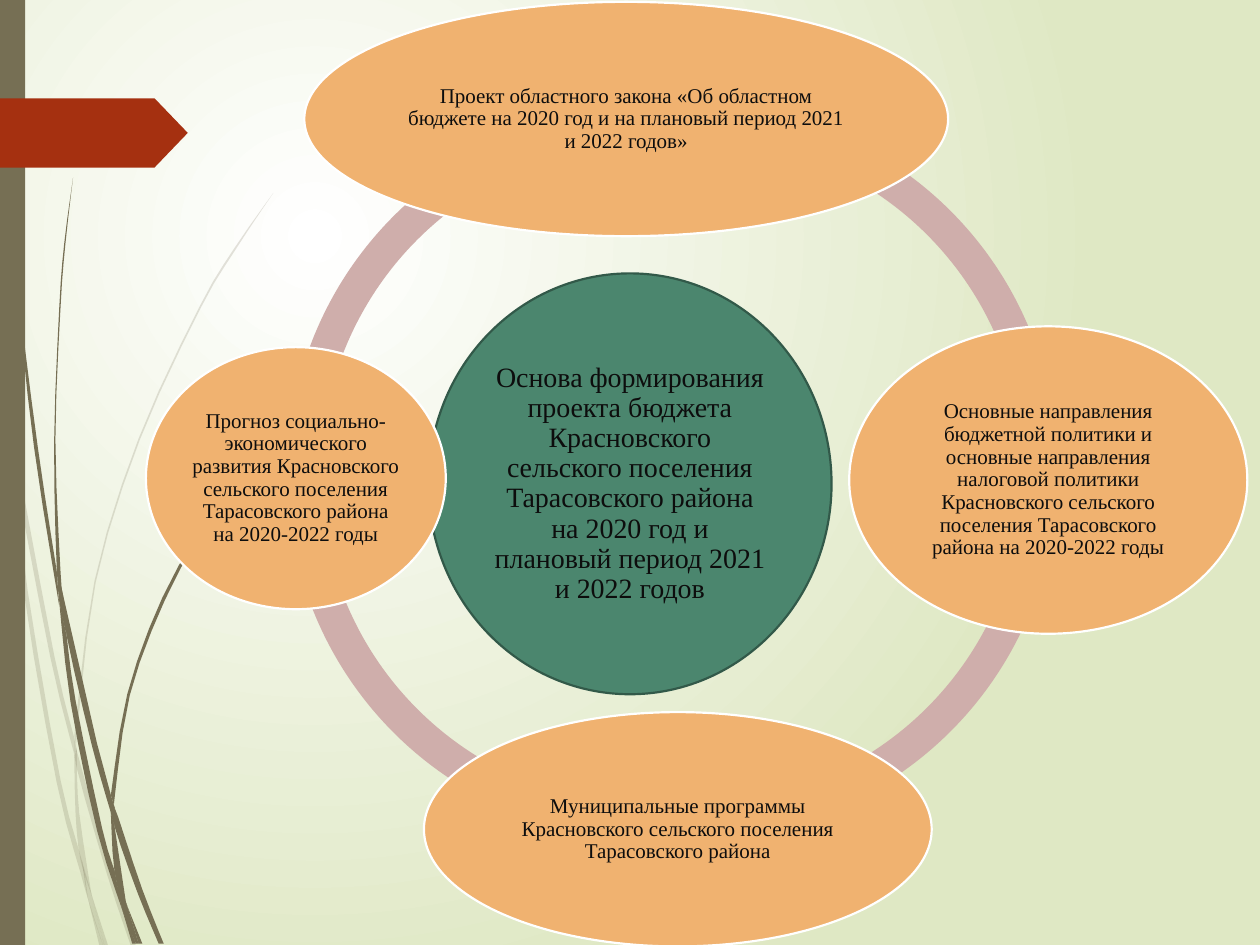
"""Build a slide with four sources around the basis of a rural settlement budget."""
from dataclasses import dataclass

from lxml import etree
from pptx import Presentation
from pptx import util as u
from pptx.dml.color import RGBColor
from pptx.enum import shapes, text
from pptx.oxml.ns import qn

COLS, ROWS = 100, 75
CELL = u.Inches(0.1)
STEPS = 3
FONT = "Times New Roman"
INK, OLIVE, RUST, ROSE = "0D0D0D", "766F54", "A53010", "CFAEAB"
GREEN, PINE, PEACH, WHITE, LIME = "4B866E", "325949", "F0B270", "FFFFFF", "DFE8C4"
KIND = shapes.MSO_SHAPE
Edge = list[tuple[float, float]]


@dataclass
class Box:
    x: float
    y: float
    w: float
    h: float


@dataclass
class Oval:
    box: Box
    words: str
    size: int = 12
    fill: str = PEACH
    edge: str = WHITE


@dataclass
class Arc:
    x: float
    y: float
    start: float
    end: float


@dataclass
class Blade:
    left: Edge
    right: Edge


PALE = [
    Blade([(0.8, 35), (0.6, 32.2), (0, 28.2)], [(0, 29.9), (0.7, 34.4)]),
    Blade([(1.2, 37.6), (4, 52.2), (5.9, 59.9)], [(5.9, 58.6), (4.3, 52), (1, 34.5)]),
    Blade([(6.1, 59.6), (6.1, 61), (8.5, 69.4), (10.4, 75.1)],
          [(10.8, 75.1), (8.8, 69.2), (6.4, 60.7)]),
    Blade([(7.3, 71.1), (8.3, 75.1)], [(8.6, 75.1)]),
    Blade([(0.8, 35), (1.9, 47), (4.5, 62.1), (6.4, 69.3), (7, 71.4)],
          [(6.9, 70.7), (6.5, 68.3), (4.8, 61.9), (2.2, 46.9), (1.2, 37.6)]),
    Blade([(5.9, 59.9), (6, 64.6), (6.4, 68.3), (7.3, 71.1)],
          [(7.2, 70.6), (6.3, 64.6), (6.1, 61)]),
    Blade([(21.7, 15.3), (18.6, 19.7), (15.8, 24.4), (11, 34.8), (7.5, 46.1), (5.9, 58.4)],
          [(6.1, 59.6), (6.1, 58.4), (7.6, 46.2), (11.1, 34.9), (15.9, 24.5),
           (18.7, 19.8), (21.7, 15.3)]),
    Blade([(7, 71.4), (7.9, 75.1)], [(8.2, 75.1)]),
    Blade([(5.9, 58.6), (5.9, 59.9), (6.1, 61)], [(6.1, 59.6)]),
    Blade([(6.5, 68.3), (7, 71.4), (8.2, 75.1)], [(8.3, 75.1), (7.3, 71.1)]),
]

DARK = [
    Blade([(0.2, 0), (0.5, 11), (1.4, 23.3), (2.7, 35.5), (4.7, 48.1)],
          [(4.5, 45.3), (3, 35.5), (1.5, 23.2), (0.6, 10.9), (0.3, 0)]),
    Blade([(5, 47.2), (5.3, 50.5), (7.3, 59.2), (8.8, 64.5)], [(8.8, 63.1), (7.7, 59)]),
    Blade([(9.1, 64.1), (9.1, 65.6), (10.9, 70.8), (12.6, 74.9)],
          [(13, 74.9), (11.3, 70.6), (9.4, 64.9)]),
    Blade([(4.7, 47.7), (5.6, 55.7), (7.7, 65.9), (9.7, 72.2)],
          [(9.1, 69.1), (8.1, 65.7), (6, 55.6), (5.3, 50.5)]),
    Blade([(5.8, 14.1), (5.1, 19.3), (4.7, 24.5), (4.3, 34.9), (4.5, 44.9), (4.9, 47.2)],
          [(5, 47.2), (4.8, 45.3), (4.4, 34.9), (4.8, 24.5), (5.2, 19.3), (5.8, 14.1)]),
    Blade([(10.1, 71.9), (11, 74.9)], [(11.3, 74.9)]),
    Blade([(4.5, 44.9), (4.7, 47.7), (5.3, 50.5)], [(5, 47.2)]),
    Blade([(21.5, 34.4), (19.1, 37.3), (16.8, 40.5), (12.9, 47.4), (10.1, 55.1), (8.8, 63.1)],
          [(9.1, 64.1), (9.1, 63.3), (10.3, 55.2), (13.1, 47.6), (16.9, 40.6),
           (19.1, 37.4), (21.6, 34.4)]),
    Blade([(9.7, 72.2), (10.5, 74.9)], [(10.8, 74.9)]),
    Blade([(8.8, 64.5), (9.1, 69.2), (10.1, 71.9)], [(10, 71.6), (9.1, 65.6)]),
    Blade([(8.8, 63.1), (8.8, 64.5), (9.1, 65.6)], [(9.1, 64.1)]),
    Blade([(9.1, 69.1), (9.7, 72.2), (10.8, 74.9)], [(11, 74.9), (10.1, 71.9)]),
]

ARCS = [Arc(22.8, 8.7, 107.54, 159.59), Arc(22.8, 8.9, 51.38, 107.73),
        Arc(26.2, 8.8, 0.53, 55.49), Arc(26.2, 8.3, 155.43, 1.19)]

OVALS = [
    Oval(Box(34, 21.7, 32, 33.4),
         "Основа формирования проекта бюджета Красновского сельского поселения "
         "Тарасовского района на 2020 год и плановый период 2021 и 2022 годов",
         16, GREEN, PINE),
    Oval(Box(24.15, 0.15, 51.1, 18.6),
         "Проект областного закона «Об областном бюджете на 2020 год "
         "и на плановый период 2021 и 2022 годов»"),
    Oval(Box(67.4, 25.9, 31.6, 24.4),
         "Основные направления бюджетной политики и основные направления "
         "налоговой политики Красновского сельского поселения "
         "Тарасовского района на 2020-2022 годы"),
    Oval(Box(33.65, 56.52, 40.3, 18.6),
         "Муниципальные программы Красновского сельского поселения "
         "Тарасовского района"),
    Oval(Box(11.58, 27.55, 23.8, 20.8),
         "Прогноз социально-экономического развития Красновского сельского "
         "поселения Тарасовского района на 2020-2022 годы"),
]


def tint(code: str) -> RGBColor:
    return RGBColor.from_string(code)


def paint(shape, fill: str, edge: str = "") -> None:
    shape.shadow.inherit = False
    shape.fill.solid()
    shape.fill.fore_color.rgb = tint(fill)
    if edge:
        shape.line.color.rgb = tint(edge)
        shape.line.width = u.Pt(1.25)
    else:
        shape.line.fill.background()


def place(slide, kind, box: Box):
    return slide.shapes.add_shape(
        kind, *(round(n * CELL) for n in (box.x, box.y, box.w, box.h)))


def smooth(pts: Edge) -> Edge:
    ends = [pts[0], *pts, pts[-1]]
    out = []
    for a, b, c, d in zip(ends, ends[1:], ends[2:], ends[3:]):
        for t in (k / STEPS for k in range(STEPS)):
            out.append(tuple(
                q + t * (r - p) / 2 + t**2 * (2 * p - 5 * q + 4 * r - s) / 2
                + t**3 * (3 * q - p - 3 * r + s) / 2
                for p, q, r, s in zip(a, b, c, d)))
    return out + [pts[-1]]


def draw_blade(slide, blade: Blade, alpha: int) -> None:
    rim = [(round(x * CELL), round(y * CELL))
           for x, y in smooth(blade.left) + smooth(blade.right)]
    form = slide.shapes.build_freeform(*rim[0])
    form.add_line_segments(rim[1:])
    shape = form.convert_to_shape()
    paint(shape, OLIVE)
    if alpha < 100:
        code = shape.element.spPr.find(f"{qn('a:solidFill')}/{qn('a:srgbClr')}")
        etree.SubElement(code, qn("a:alpha"), val=str(alpha * 1000))


def draw_arc(slide, arc: Arc) -> None:
    shape = place(slide, KIND.BLOCK_ARC, Box(arc.x, arc.y, 57.7, 57.7))
    for i, val in enumerate((arc.start, arc.end, 0.046)):
        shape.adjustments[i] = val
    paint(shape, ROSE)


def draw_oval(slide, oval: Oval) -> None:
    shape = place(slide, KIND.OVAL, oval.box)
    paint(shape, oval.fill, oval.edge)
    frame = shape.text_frame
    frame.text = oval.words
    frame.word_wrap = True
    frame.vertical_anchor = text.MSO_ANCHOR.MIDDLE
    frame.margin_left = frame.margin_right = u.Inches(0.02)
    frame.margin_top = frame.margin_bottom = u.Inches(0.02)
    para = frame.paragraphs[0]
    para.alignment, para.line_spacing = text.PP_ALIGN.CENTER, 0.9
    font = para.runs[0].font
    font.name, font.size = FONT, u.Pt(oval.size)
    font.color.rgb = tint(INK)


def draw_back(slide) -> None:
    fill = slide.background.fill
    fill.gradient()
    for stop, code, pos in zip(fill.gradient_stops, (WHITE, LIME), (0, 1)):
        stop.color.rgb = tint(code)
        stop.position = pos
    grad = slide.element.find(f".//{qn('a:gradFill')}")
    grad.remove(grad.find(qn("a:lin")))
    ring = etree.Element(qn("a:path"), path="circle")
    etree.SubElement(ring, qn("a:fillToRect"), l="50000", t="50000", r="100000", b="100000")
    grad.find(qn("a:gsLst")).addnext(ring)


def main() -> None:
    deck = Presentation()
    deck.slide_width, deck.slide_height = COLS * CELL, ROWS * CELL
    slide = deck.slides.add_slide(deck.slide_layouts[6])
    draw_back(slide)
    for group, alpha in ((PALE, 20), (DARK, 100)):
        for blade in group:
            draw_blade(slide, blade, alpha)
    paint(place(slide, KIND.RECTANGLE, Box(0, 0, 2, ROWS)), OLIVE)
    flag = place(slide, KIND.PENTAGON, Box(0, 7.8, 14.9, 5.5))
    flag.adjustments[0] = 0.48
    paint(flag, RUST)
    for arc in ARCS:
        draw_arc(slide, arc)
    for oval in OVALS:
        draw_oval(slide, oval)
    deck.save("out.pptx")


if __name__ == "__main__":
    main()
